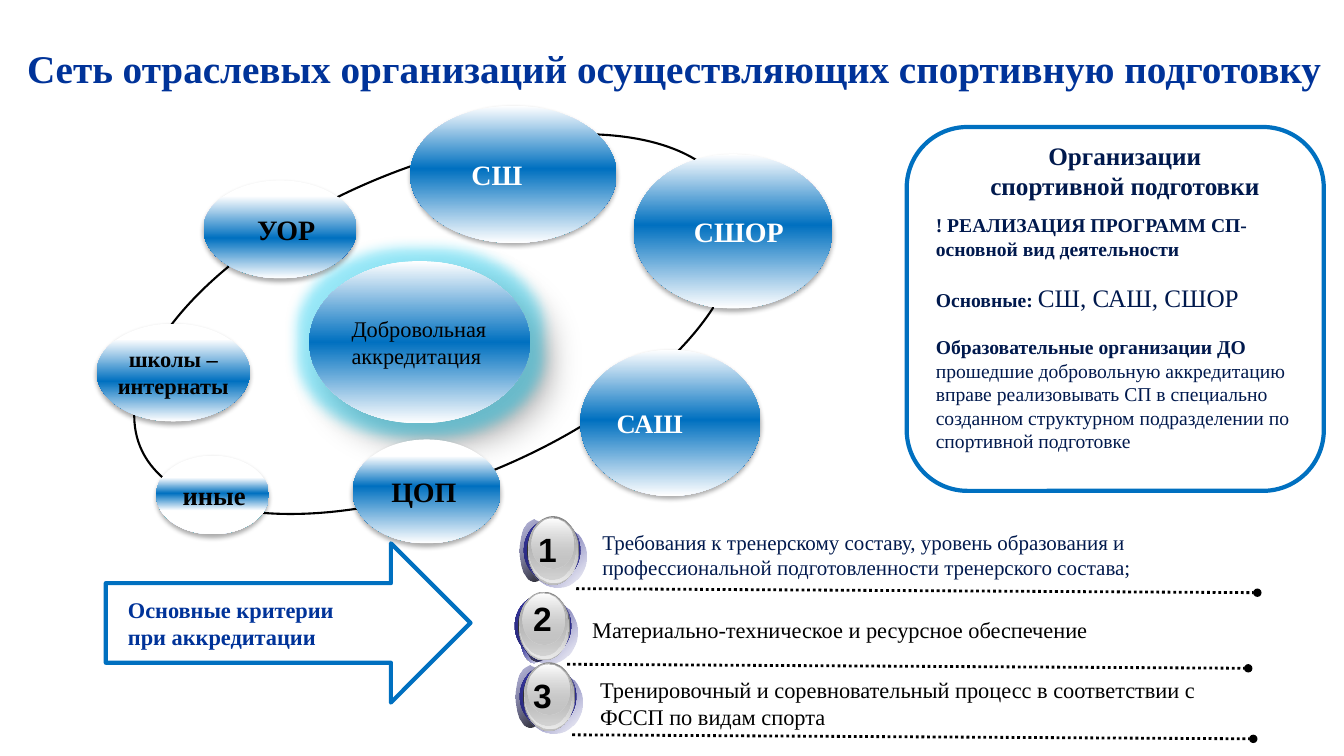
from pptx import Presentation
from pptx.dml.color import RGBColor as RGB
from pptx.enum.dml import MSO_LINE
from pptx.enum.shapes import MSO_CONNECTOR, MSO_SHAPE as SHAPE
from pptx.enum.text import MSO_ANCHOR as ANCHOR, PP_ALIGN as ALIGN
from pptx.oxml import parse_xml
from pptx.oxml.ns import nsdecls, qn
from pptx.util import Inches, Pt

WHITE = RGB(0xFF, 0xFF, 0xFF)
BLACK = RGB(0, 0, 0)
BLUE = RGB(0x00, 0x70, 0xC0)
NAVY = RGB(0x00, 0x19, 0x4D)
ROYAL = RGB(0x00, 0x33, 0x99)
CYAN = RGB(0x00, 0xC8, 0xF0)
INDIGO = RGB(0x33, 0x33, 0x99)
DUSK = RGB(0x27, 0x27, 0x75)
SHADE = RGB(0x2A, 0x2A, 0x7E)
COAL = RGB(0x33, 0x33, 0x33)
STEEL = RGB(0x89, 0x89, 0x89)
ASH = RGB(0xAE, 0xAE, 0xAE)
SILVER = RGB(0xC0, 0xC0, 0xC0)
PEARL = RGB(0xEB, 0xEB, 0xEB)
SERIF = "Times New Roman"

# Slide with a grid of 1334 columns by 750 rows
deck = Presentation()
deck.slide_width, deck.slide_height = Inches(13.34), Inches(7.5)
U = deck.slide_width // 1334
slide = deck.slides.add_slide(deck.slide_layouts[5])
shapes = slide.shapes


def oval(x, y, w, h, stops, angle=90):
    """Ellipse with a gradient; a stop is (position, colour, opacity), in percent."""
    shape = shapes.add_shape(SHAPE.OVAL, x * U, y * U, w * U, h * U)
    shape.shadow.inherit = False
    shape.line.fill.background()
    shape.fill.background()
    marks = "".join(
        f'<a:gs pos="{pos * 1000}"><a:srgbClr val="{color}">'
        f'<a:alpha val="{alpha * 1000}"/></a:srgbClr></a:gs>'
        for pos, color, alpha in stops)
    grad = parse_xml(
        f'<a:gradFill {nsdecls("a")} rotWithShape="1"><a:gsLst>{marks}</a:gsLst>'
        f'<a:lin ang="{angle * 60000}" scaled="0"/></a:gradFill>')
    props = shape._element.spPr
    props.replace(props.find(qn("a:noFill")), grad)
    return shape


def put(par, text, size, color, bold=False, font=SERIF):
    run = par.add_run()
    run.text = text
    run.font.name, run.font.size, run.font.bold = font, Pt(size), bold
    run.font.color.rgb = color


# Title
title = shapes.title
title.left, title.top, title.width, title.height = 4 * U, 30 * U, 1330 * U, 74 * U
frame = title.text_frame
frame.margin_left = frame.margin_right = 0
frame.word_wrap = False
frame.vertical_anchor = ANCHOR.MIDDLE
frame.paragraphs[0].alignment = ALIGN.CENTER
put(frame.paragraphs[0],
    "Сеть отраслевых организаций осуществляющих спортивную подготовку", 28, ROYAL, True)

# Orbit
orbit = shapes.add_shape(SHAPE.OVAL, 115 * U, 166 * U, 637 * U, 311 * U)
orbit.shadow.inherit = False
orbit.rotation = 337.5
orbit.fill.background()
orbit.line.color.rgb, orbit.line.width = BLACK, Pt(1.5)

# Organisations: place, gradient positions, left inset, lines, size, colour
nodes = [
    ((307, 259, 219, 161), (0, 50, 100), 10, ["Добровольная", "аккредитация"], 16, BLACK),
    ((576, 347, 179, 145), (0, 48, 100), 10, ["САШ"], 19, WHITE),
    ((407, 105, 205, 136), (0, 46, 100), 31, ["СШ"], 20, WHITE),
    ((202, 179, 152, 97), (16, 59, 100), 31, ["УОР"], 20, BLACK),
    ((629, 153, 197, 153), (0, 46, 100), 31, ["СШОР"], 20, WHITE),
    ((350, 436, 147, 103), (16, 45, 100), 17, ["ЦОП"], 20, BLACK),
    ((155, 452, 112, 78), (28, 48, 70), 10, ["иные"], 19, BLACK),
    ((96, 321, 152, 97), (16, 59, 100), 10, ["школы –", "интернаты"], 16, BLACK),
]
for place, spots, inset, lines, size, color in nodes:
    hub = lines[0] == "Добровольная"
    stops = [(pos, tone, 100) for pos, tone in zip(spots, (WHITE, BLUE, WHITE))]
    node = oval(*place, stops)
    alpha, blur, dist, angle = (30, 15, 18, 45) if hub else (32, 3.5, 2.2, 90)
    effects = node._element.spPr.find(qn("a:effectLst"))
    if hub:
        effects.append(parse_xml(
            f'<a:glow {nsdecls("a")} rad="{Pt(18)}"><a:srgbClr val="{CYAN}">'
            '<a:alpha val="40000"/></a:srgbClr></a:glow>'))
    effects.append(parse_xml(
        f'<a:outerShdw {nsdecls("a")} blurRad="{Pt(blur)}" dist="{Pt(dist)}" '
        f'dir="{angle * 60000}" rotWithShape="0"><a:srgbClr val="{BLACK}">'
        f'<a:alpha val="{alpha * 1000}"/></a:srgbClr></a:outerShdw>'))
    frame = node.text_frame
    frame.word_wrap = False
    frame.vertical_anchor = ANCHOR.MIDDLE
    frame.margin_left = inset * U
    for i, line in enumerate(lines):
        par = frame.add_paragraph() if i else frame.paragraphs[0]
        par.alignment = ALIGN.CENTER if len(lines) > 1 and not hub else ALIGN.LEFT
        put(par, line, size, color, not hub)

# Outlined panel and criteria arrow
for kind, x, y, w, h in [(SHAPE.ROUNDED_RECTANGLE, 900, 126, 414, 361),
                         (SHAPE.RIGHT_ARROW, 105, 539, 362, 158)]:
    frame_shape = shapes.add_shape(kind, x * U, y * U, w * U, h * U)
    frame_shape.shadow.inherit = False
    frame_shape.fill.background()
    frame_shape.line.color.rgb, frame_shape.line.width = BLUE, Pt(3)
frame = frame_shape.text_frame
frame.margin_left = 22 * U
frame.vertical_anchor = ANCHOR.MIDDLE
for i, line in enumerate(["Основные критерии", "при аккредитации"]):
    par = frame.add_paragraph() if i else frame.paragraphs[0]
    par.alignment = ALIGN.LEFT
    put(par, line, 16, ROYAL, True)

# Panel text: alignment, space before, runs of (text, size, bold)
notes = [
    (ALIGN.CENTER, 0, [("Организации", 18, True)]),
    (ALIGN.CENTER, 0, [("спортивной подготовки", 18, True)]),
    (ALIGN.LEFT, 9, [("! РЕАЛИЗАЦИЯ ПРОГРАММ СП- основной вид деятельности", 14, True)]),
    (ALIGN.LEFT, 16, [("Основные: ", 14, True), ("СШ, САШ, СШОР", 18, False)]),
    (ALIGN.LEFT, 16, [
        ("Образовательные организации ДО ", 14, True),
        ("прошедшие добровольную аккредитацию вправе реализовывать СП в специально "
         "созданном структурном подразделении по спортивной подготовке", 14, False)]),
]
frame = shapes.add_textbox(919 * U, 134 * U, 395 * U, 350 * U).text_frame
frame.word_wrap = True
for i, (align, gap, runs) in enumerate(notes):
    par = frame.add_paragraph() if i else frame.paragraphs[0]
    par.alignment = align
    if gap:
        par.space_before = Pt(gap)
    for text, size, bold in runs:
        put(par, text, size, NAVY, bold)

# Badge layers: offset and size, gradient, angle
back = [
    ([(0, WHITE, 100), (50, INDIGO, 100), (100, WHITE, 100)], 45),
    ([(0, INDIGO, 32), (100, BLACK, 90)], 45),
]
layers = [
    ((-4, 3, 56, 62), [(0, DUSK, 100), (50, INDIGO, 100), (100, DUSK, 100)], 315),
    ((1, 9, 57, 62), [(0, SHADE, 100), (100, INDIGO, 0)], 45),
    ((-1, 3, 52, 62), [(0, COAL, 100), (100, COAL, 100)], 90),
    ((0, 0, 50, 68), [(0, STEEL, 100), (100, SILVER, 100)], 90),
    ((1, 0, 49, 66), [(0, SILVER, 0), (100, PEARL, 100)], 90),
    ((1, 1, 46, 62), [(0, ASH, 100), (100, SILVER, 48)], 90),
    ((4, 2, 41, 50), [(0, WHITE, 100), (100, SILVER, 38)], 90),
]

# Criteria: badge corner, back layer offsets, number offset, text place, text
side = [(6, 5), (-8, 3)]
items = [
    (524, 512, side, (0, 8), (588, 520),
     "Требования к тренерскому составу, уровень образования и профессиональной "
     "подготовленности тренерского состава;", 15, NAVY),
    (515, 587, [(1, 9), (4, 7)], (4, 1), (578, 606),
     "Материально-техническое и ресурсное обеспечение", 16, BLACK),
    (520, 657, side, (-1, 8), (586, 666),
     "Тренировочный и соревновательный процесс в соответствии с ФССП по видам спорта",
     16, BLACK),
]
for n, (x, y, offs, (dx, dy), (tx, ty), text, size, color) in enumerate(items, 1):
    for (ox, oy), (stops, angle) in zip(offs, back):
        oval(x + ox, y + oy, 28, 62, stops, angle)
    for (ox, oy, w, h), stops, angle in layers:
        oval(x + ox, y + oy, w, h, stops, angle)

    rule = shapes.add_connector(MSO_CONNECTOR.STRAIGHT, (x + 48) * U, (y + 72) * U,
                                (x + 724) * U, (y + 76) * U)
    rule.line.color.rgb, rule.line.width = BLACK, Pt(2)
    rule.line.dash_style = MSO_LINE.ROUND_DOT
    props = rule._element.spPr
    props.find(qn("a:ln")).append(parse_xml(f'<a:tailEnd {nsdecls("a")} type="oval"/>'))
    props.append(parse_xml(f'<a:effectLst {nsdecls("a")}/>'))

    frame = shapes.add_textbox((x + dx) * U, (y + dy) * U, 39 * U, 50 * U).text_frame
    frame.word_wrap = False
    frame.paragraphs[0].alignment = ALIGN.CENTER
    put(frame.paragraphs[0], str(n), 24, BLACK, True, "Arial")

    frame = shapes.add_textbox(tx * U, ty * U, 650 * U, 64 * U).text_frame
    frame.word_wrap = True
    put(frame.paragraphs[0], text, size, color)

deck.save("out.pptx")
